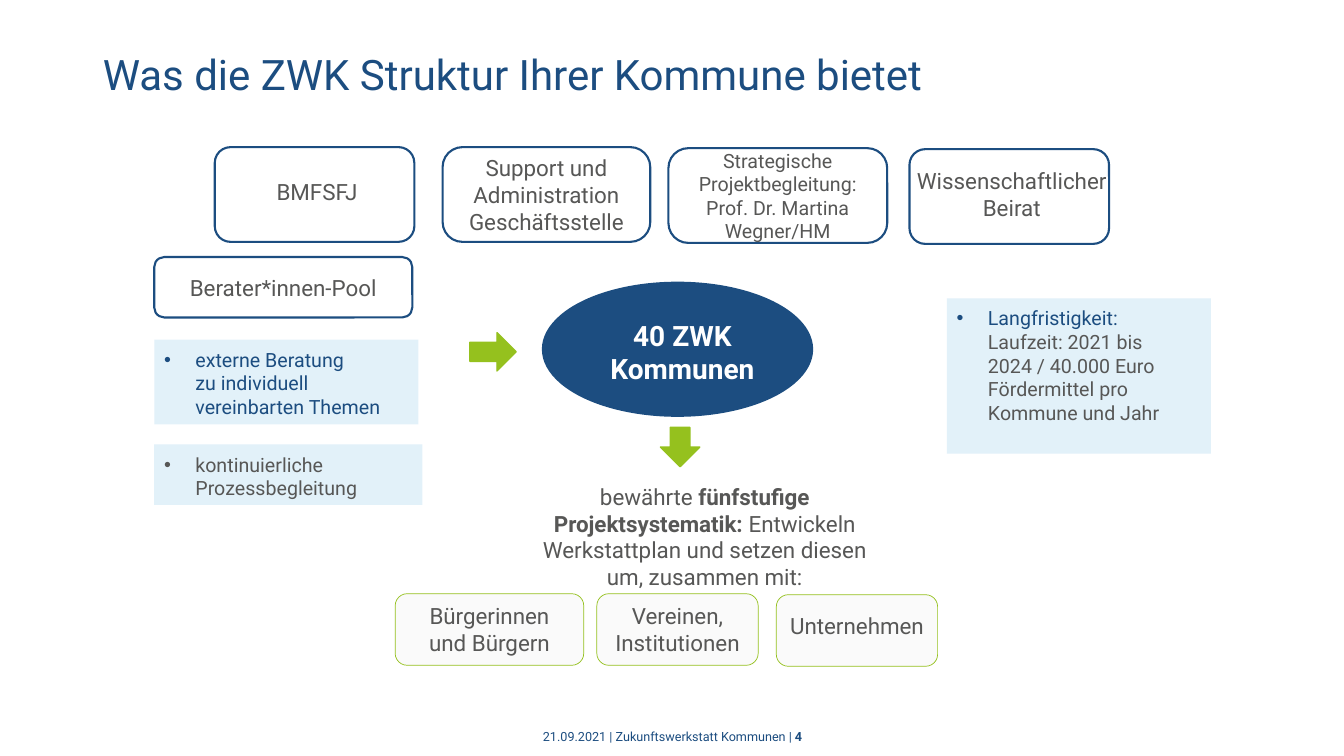
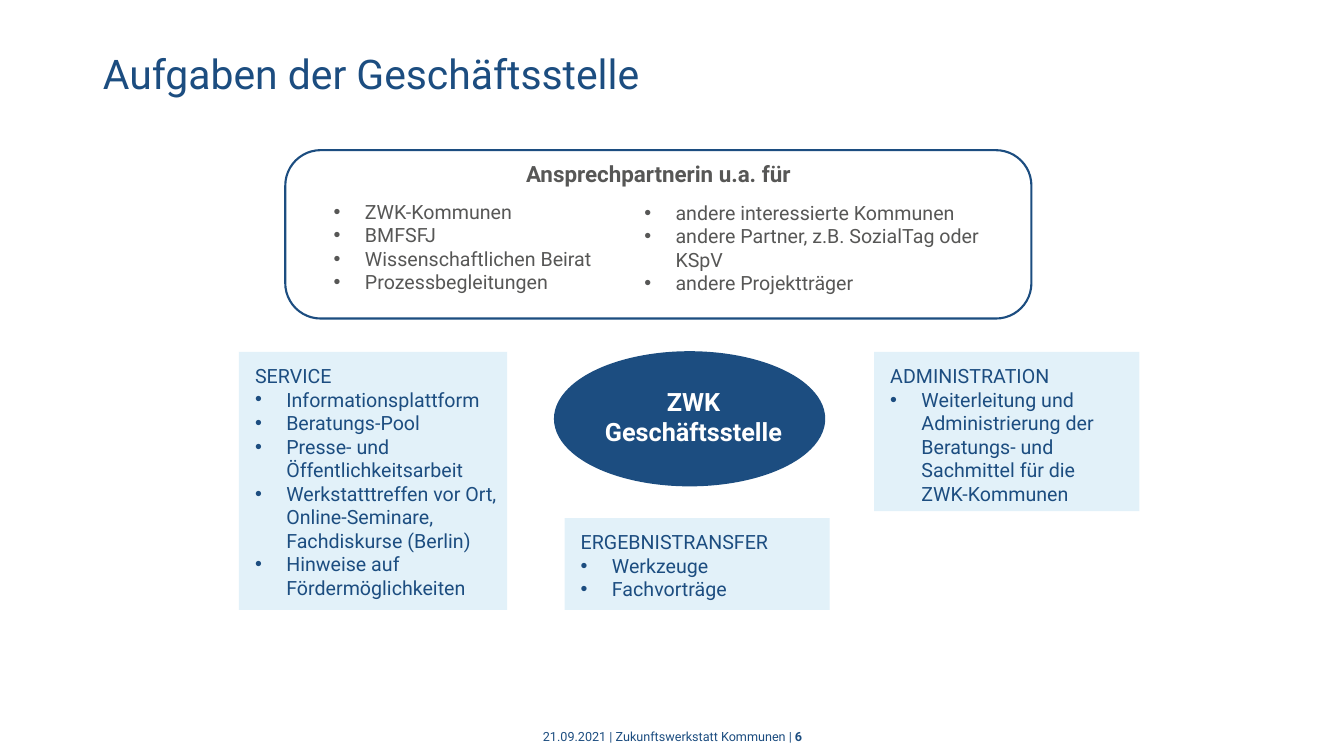
from copy import deepcopy

from lxml.etree import SubElement
from pptx import Presentation
from pptx.dml.color import RGBColor
from pptx.enum.shapes import MSO_SHAPE as Shape
from pptx.enum.text import MSO_ANCHOR as Anchor, MSO_AUTO_SIZE as AutoSize, PP_ALIGN as Align
from pptx.oxml.ns import qn
from pptx.util import Emu, Pt

PX = 9144
COLORS = {
    "blue": "1C4D80",
    "green": "95C11E",
    "grey": "575756",
    "sky": "3DA3DC",
    "pale": "FAFAFA",
    "white": "FFFFFF",
}
TITLE_ONLY, TWO_CONTENT = 5, 3
BULLET_INDENT = 31


def px(value):
    return Emu(value * PX)


def rgb(name):
    return RGBColor.from_string(COLORS[name])


class Deck:
    text_style = {"name": "Roboto", "size": 16, "bold": False, "color": "grey"}
    frame_style = {"word_wrap": True, "auto_size": AutoSize.NONE, "vertical_anchor": Anchor.TOP}

    def __init__(self):
        self.prs = Presentation()
        self.prs.slide_width, self.prs.slide_height = px(1333), px(750)
        self.slide = None

    def start(self, layout, title, page, title_size=30):
        self.slide = self.prs.slides.add_slide(self.prs.slide_layouts[layout])
        heading = self.slide.shapes.title
        self.place(heading, (92, 49, 941, 66))
        self.set_text(heading, [title], size=title_size, color="blue", spacing=0.9)
        self.label((492, 712, 350, 38),
                   [("21.09.2021 | Zukunftswerkstatt Kommunen | ", {}), (page, {"bold": True})],
                   size=9, color="blue", anchor=Anchor.MIDDLE)

    def place(self, shape, box):
        for side, value in zip(("left", "top", "width", "height"), box):
            setattr(shape, side, px(value))

    def add_runs(self, paragraph, parts, style):
        for text, changes in parts:
            look = {**style, **changes}
            for number, line in enumerate(text.split("\n")):
                if number:
                    paragraph.add_line_break()
                    paragraph._p[-1].append(deepcopy(run._r.get_or_add_rPr()))
                run = paragraph.add_run()
                run.text = line
                font_values = {"name": look["name"], "size": Pt(look["size"]), "bold": look["bold"]}
                for attribute, value in font_values.items():
                    setattr(run.font, attribute, value)
                run.font.color.rgb = rgb(look["color"])

    def add_bullet(self, paragraph):
        props = paragraph._p.get_or_add_pPr()
        props.set("marL", str(px(BULLET_INDENT)))
        props.set("indent", str(px(-BULLET_INDENT)))
        SubElement(props, qn("a:buFont")).set("typeface", "Arial")
        SubElement(props, qn("a:buChar")).set("char", "•")

    def set_text(self, shape, paragraphs, margins=(10, 5, 10, 5), align=Align.LEFT,
                 anchor=Anchor.TOP, wrap=True, spacing=1.0, bullets_from=None, **style):
        frame = shape.text_frame
        frame_values = {**self.frame_style, "vertical_anchor": anchor, "word_wrap": wrap}
        for side, value in zip(("left", "top", "right", "bottom"), margins):
            frame_values[f"margin_{side}"] = px(value)
        for attribute, value in frame_values.items():
            setattr(frame, attribute, value)
        for number, content in enumerate(paragraphs):
            paragraph = frame.add_paragraph() if number else frame.paragraphs[0]
            if bullets_from is not None and number >= bullets_from:
                self.add_bullet(paragraph)
            layout_values = {"alignment": align, "line_spacing": spacing, "space_before": Pt(0)}
            for attribute, value in layout_values.items():
                setattr(paragraph, attribute, value)
            parts = [(content, {})] if isinstance(content, str) else content
            self.add_runs(paragraph, parts, {**self.text_style, **style})

    def label(self, box, parts, **options):
        area = self.slide.shapes.add_textbox(*map(px, box))
        self.set_text(area, [parts], align=Align.CENTER, **options)

    def figure(self, kind, box, fill, line=None, line_width=1.0):
        shape = self.slide.shapes.add_shape(kind, *map(px, box))
        shape.shadow.inherit = False
        shape.fill.solid()
        shape.fill.fore_color.rgb = rgb(fill)
        if line:
            shape.line.color.rgb = rgb(line)
            shape.line.width = Pt(line_width)
        else:
            shape.line.fill.background()
        return shape

    def card(self, box, text, fill="white", line="blue", line_width=1.5, corner=None,
             margins=(5, 5, 5, 5), anchor=Anchor.MIDDLE, **options):
        shape = self.figure(Shape.ROUNDED_RECTANGLE, box, fill, line, line_width)
        if corner:
            shape.adjustments[0] = corner
        self.set_text(shape, [text], margins, Align.CENTER, anchor, **options)

    def partner(self, box, text, **options):
        self.card(box, text, fill="pale", line="green", line_width=0.5, **options)

    def hub(self, box, text, size, margins):
        shape = self.figure(Shape.OVAL, box, "blue", "blue", 2.25)
        self.set_text(shape, [text], margins, Align.CENTER, Anchor.MIDDLE,
                      size=size, bold=True, color="white")

    def arrow(self, kind, box):
        self.figure(kind, box, "green", "green")

    def panel(self, box, items, heading=None, color="blue"):
        shape = self.figure(Shape.RECTANGLE, box, "sky")
        tint = shape.fill._xPr.find(qn("a:solidFill"))[0]
        SubElement(tint, qn("a:alpha")).set("val", "15000")
        margins = (16, 12, 8, 5) if heading else (10, 8, 10, 5)
        paragraphs = [heading, *items] if heading else items
        self.set_text(shape, paragraphs, margins, size=14, color=color,
                      bullets_from=1 if heading else 0)

    def bullet_list(self, index, box, items):
        body = self.slide.placeholders[index]
        self.slide.shapes.element.append(body.element)
        self.place(body, box)
        self.set_text(body, items, size=14, bullets_from=0)


def build_structure(deck):
    deck.start(TITLE_ONLY, "Was die ZWK Struktur Ihrer Kommune bietet", "4")
    deck.card((213, 146, 198, 94), "BMFSFJ", margins=(10, 5, 5, 10))
    deck.card((439, 146, 206, 94), "Support und Administration\nGeschäftsstelle", corner=0.21)
    deck.card((663, 147, 217, 94),
              "Strategische Projektbegleitung:\nProf. Dr. Martina Wegner/HM",
              corner=0.21, size=14)
    deck.card((902, 148, 198, 94), "Wissenschaftlicher\nBeirat", wrap=False,
              margins=(5, 5, 0, 10))
    deck.card((153, 255, 256, 60), "Berater*innen-Pool")

    deck.panel((153, 337, 262, 84), ["externe Beratung\nzu individuell vereinbarten Themen"])
    deck.panel((153, 441, 266, 60), ["kontinuierliche Prozessbegleitung"], color="grey")
    deck.panel((939, 296, 262, 154), [[
        ("Langfristigkeit:\n", {}),
        ("Laufzeit: 2021 bis\n2024 / 40.000 Euro Fördermittel pro Kommune und Jahr",
         {"color": "grey"}),
    ]])

    deck.hub((539, 281, 266, 131), "40 ZWK Kommunen", 20, (10, 5, 0, 0))
    deck.arrow(Shape.RIGHT_ARROW, (466, 330, 46, 38))
    deck.arrow(Shape.DOWN_ARROW, (655, 424, 39, 39))
    deck.label((510, 474, 378, 118), [
        ("bewährte ", {}),
        ("fünfstufige Projektsystematik: ", {"bold": True}),
        ("Entwickeln Werkstattplan und setzen diesen um, zusammen mit:", {}),
    ])
    deck.partner((392, 589, 187, 71), "Bürgerinnen\nund Bürgern")
    deck.partner((592, 589, 160, 71), "Vereinen, Institutionen")
    deck.partner((770, 590, 160, 71), "Unternehmen", margins=(5, 0, 5, 10))


def build_tasks(deck):
    deck.start(TWO_CONTENT, "Aufgaben der Geschäftsstelle", "6", title_size=29.2)
    deck.card((283, 149, 740, 167), "Ansprechpartnerin u.a. für", corner=0.21,
              margins=(10, 0, 10, 5), anchor=Anchor.TOP, bold=True)
    deck.bullet_list(1, (321, 193, 291, 128), [
        "ZWK-Kommunen",
        "BMFSFJ",
        "Wissenschaftlichen Beirat",
        "Prozessbegleitungen",
    ])
    deck.bullet_list(2, (629, 194, 370, 104), [
        "andere interessierte Kommunen",
        "andere Partner, z.B. SozialTag oder KSpV",
        "andere Projektträger",
    ])
    deck.panel((237, 349, 266, 256), [
        "Informationsplattform",
        "Beratungs-Pool",
        "Presse- und Öffentlichkeitsarbeit",
        "Werkstatttreffen vor Ort, Online-Seminare,\nFachdiskurse (Berlin)",
        "Hinweise auf Fördermöglichkeiten",
    ], "SERVICE")
    deck.panel((867, 349, 263, 158), [
        "Weiterleitung und Administrierung der Beratungs- und Sachmittel für die\nZWK-Kommunen",
    ], "ADMINISTRATION")
    deck.panel((560, 514, 263, 91), ["Werkzeuge", "Fachvorträge"], "ERGEBNISTRANSFER")
    deck.hub((551, 350, 266, 131), "ZWK Geschäftsstelle", 18, (8, 0, 0, 4))


def main():
    deck = Deck()
    build_structure(deck)
    build_tasks(deck)
    deck.prs.save("out.pptx")


if __name__ == "__main__":
    main()
